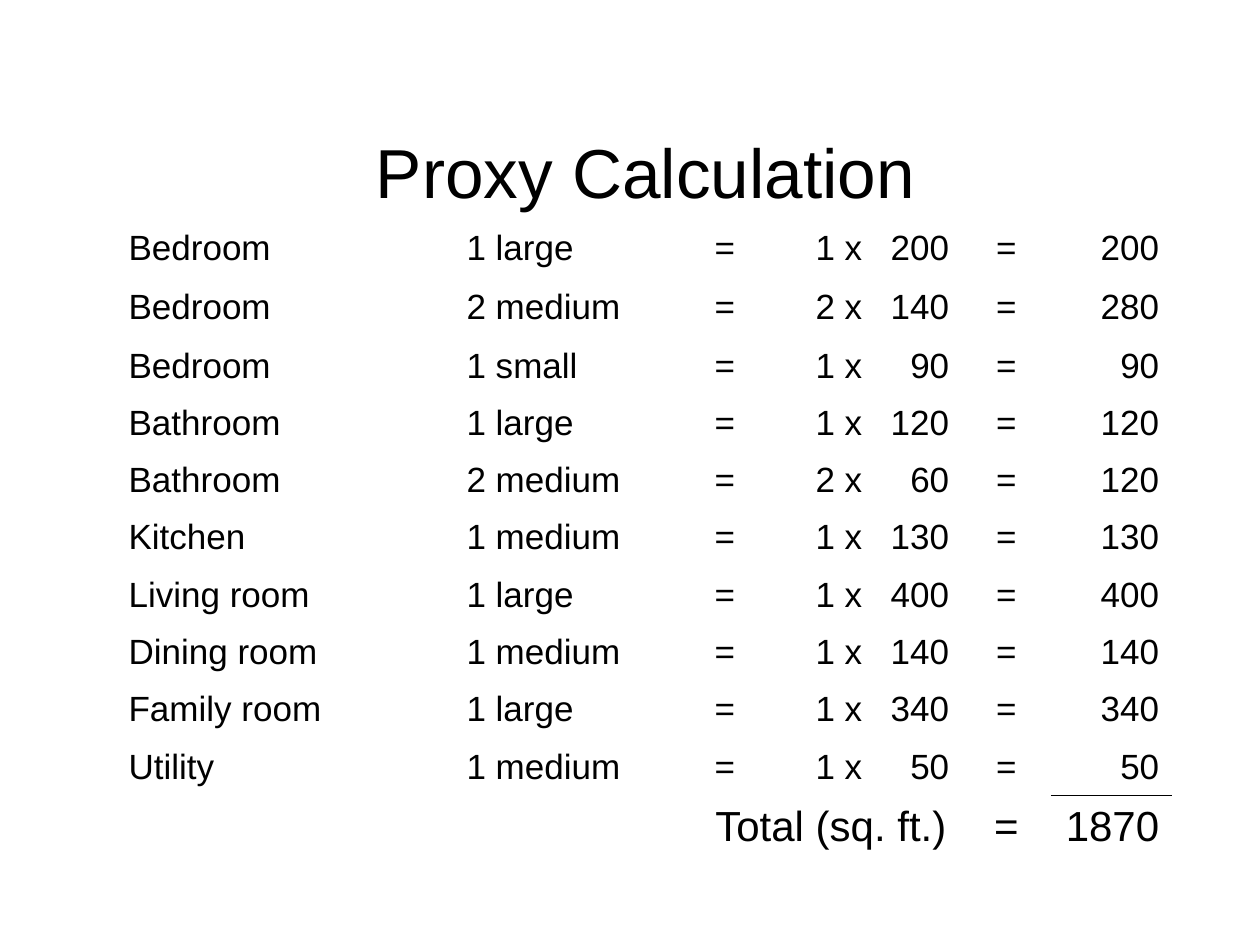
"""Build the proxy calculation slide: room areas summed in a table."""
from dataclasses import dataclass

from lxml import etree
from pptx import Presentation
from pptx.dml.color import RGBColor
from pptx.enum.text import MSO_ANCHOR, MSO_AUTO_SIZE, PP_ALIGN
from pptx.oxml.ns import qn
from pptx.util import Emu, Pt

LEFT, MID, RIGHT = PP_ALIGN.LEFT, PP_ALIGN.CENTER, PP_ALIGN.RIGHT
CENTRE = MSO_ANCHOR.MIDDLE
FIXED = MSO_AUTO_SIZE.NONE
SCALE = 914400 / 126
PLAIN = "{2D5ABB26-0587-4C30-8999-92F81FD0307C}"


@dataclass(frozen=True)
class Theme:
    font: str = "Arial"
    ink: str = "000000"
    title: float = 39.6
    body: int = 20
    total: int = 24
    rule: int = 1


@dataclass(frozen=True)
class Room:
    name: str
    size: str
    count: int
    area: int

    @property
    def sum(self) -> int:
        return self.count * self.area


@dataclass(frozen=True)
class Column:
    width: int
    align: PP_ALIGN


THEME = Theme()
ROOMS = (
    Room("Bedroom", "large", 1, 200),
    Room("Bedroom", "medium", 2, 140),
    Room("Bedroom", "small", 1, 90),
    Room("Bathroom", "large", 1, 120),
    Room("Bathroom", "medium", 2, 60),
    Room("Kitchen", "medium", 1, 130),
    Room("Living room", "large", 1, 400),
    Room("Dining room", "medium", 1, 140),
    Room("Family room", "large", 1, 340),
    Room("Utility", "medium", 1, 50),
)
COLUMNS = (
    Column(338, LEFT), Column(246, LEFT), Column(50, MID), Column(125, RIGHT),
    Column(87, RIGHT), Column(89, MID), Column(121, RIGHT),
)
TALL, LAST, HEIGHT = 60, 63, 639


def px(size: float) -> Emu:
    """Turn pixels into EMU."""
    return Emu(round(size * SCALE))


def write(frame, text: str, size: float, align: PP_ALIGN) -> None:
    """Set one line of text and its format."""
    frame.text = text
    line = frame.paragraphs[0]
    line.alignment = align
    for run in line.runs:
        run.font.size = Pt(size)
        run.font.name = THEME.font
        run.font.color.rgb = RGBColor.from_string(THEME.ink)


def fill(cell, text: str, size: float, align: PP_ALIGN) -> None:
    """Write a table cell, centred by height."""
    write(cell.text_frame, text, size, align)
    cell.vertical_anchor = CENTRE


def border(cell, side: str) -> None:
    """Draw a thin rule on one side of a cell."""
    line = etree.Element(qn(f"a:ln{side}"), w=str(Pt(THEME.rule)))
    solid = etree.SubElement(line, qn("a:solidFill"))
    etree.SubElement(solid, qn("a:srgbClr"), val=THEME.ink)
    cell._tc.get_or_add_tcPr().insert(0, line)


def head(slide) -> None:
    """Place and format the title."""
    title = slide.shapes.title
    title.left, title.top = px(134), px(130)
    title.width, title.height = px(1023), px(77)
    frame = title.text_frame
    frame.auto_size = FIXED
    frame.vertical_anchor = CENTRE
    frame.margin_top, frame.margin_bottom = px(4), 0
    write(frame, "Proxy Calculation", THEME.title, MID)


def grid(slide) -> None:
    """Draw the rooms and their total as a table."""
    end = len(ROOMS)
    width = sum(col.width for col in COLUMNS)
    table = slide.shapes.add_table(
        end + 1, len(COLUMNS), px(116), px(220), px(width), px(HEIGHT)).table
    table.first_row = table.horz_banding = False
    table._tbl.tblPr[0].text = PLAIN
    for col, spec in zip(table.columns, COLUMNS):
        col.width = px(spec.width)
    step = (HEIGHT - TALL - LAST) / (end - 1)
    for row in table.rows:
        row.height = px(step)
    table.rows[1].height, table.rows[end].height = px(TALL), px(LAST)
    for row, room in enumerate(ROOMS):
        texts = (room.name, f"{room.count} {room.size}", "=",
                 f"{room.count} x", str(room.area), "=", str(room.sum))
        for col, (text, spec) in enumerate(zip(texts, COLUMNS)):
            fill(table.cell(row, col), text, THEME.body, spec.align)
    table.cell(end, 2).merge(table.cell(end, 4))
    total = str(sum(room.sum for room in ROOMS))
    for col, text in ((2, "Total (sq. ft.)"), (5, "="), (6, total)):
        fill(table.cell(end, col), text, THEME.total, COLUMNS[col].align)
    for row in table.rows:
        for cell in row.cells:
            cell.fill.background()
    border(table.cell(end - 1, 6), "B")
    border(table.cell(end, 6), "T")


def main() -> None:
    """Build and save the slide."""
    deck = Presentation()
    deck.slide_width, deck.slide_height = px(1260), px(945)
    slide = deck.slides.add_slide(deck.slide_layouts[5])
    head(slide)
    grid(slide)
    deck.save("out.pptx")


if __name__ == "__main__":
    main()
